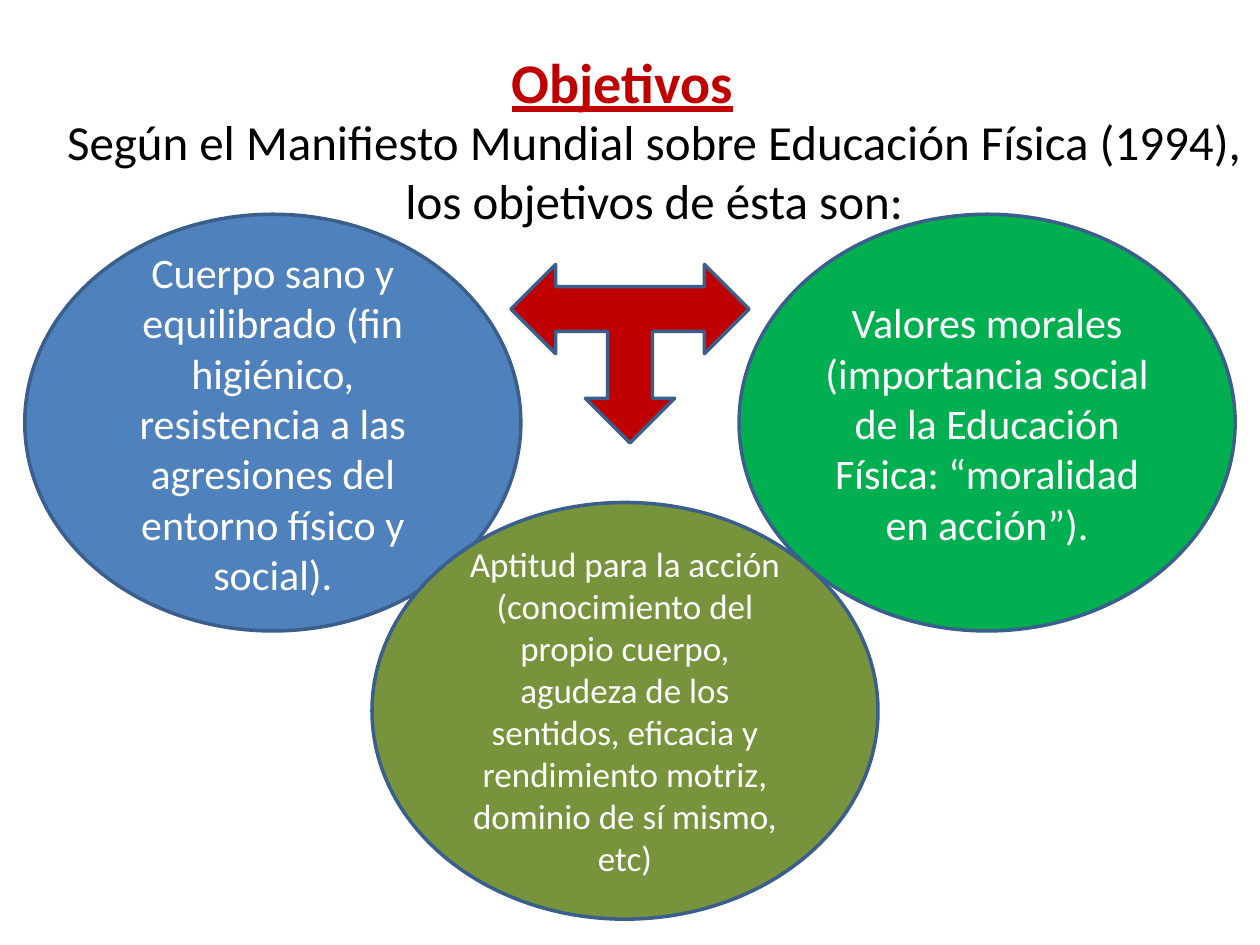
import pptx
import pptx.util
import pptx.dml.color
import pptx.enum.shapes
import pptx.enum.text

Cm = pptx.util.Cm
Pt = pptx.util.Pt
Kind = pptx.enum.shapes.MSO_SHAPE
Anchor = pptx.enum.text.MSO_ANCHOR
HUES = {
    "red": "C00000", "green": "00B050", "blue": "4F81BD", "olive": "77933C",
    "edge": "3A5F8C", "black": "000000", "white": "FFFFFF",
}


class Deck:
    """Holds the style and the current slide."""

    def __init__(self):
        self.font = "Calibri"
        self.show = pptx.Presentation()
        self.show.slide_width = Cm(25.4)
        self.show.slide_height = Cm(19.05)
        self.slide = self.show.slides.add_slide(self.show.slide_layouts[6])

    def hue(self, name):
        return pptx.dml.color.RGBColor.from_string(HUES[name])

    def letter(self, shape, text, size, hue, anchor, bold=False):
        frame = shape.text_frame
        frame.word_wrap = True
        frame.vertical_anchor = anchor
        frame.text = text
        line = frame.paragraphs[0]
        line.alignment = pptx.enum.text.PP_ALIGN.CENTER
        font = line.runs[0].font
        font.name = self.font
        font.size = Pt(size)
        font.color.rgb = self.hue(hue)
        font.bold = font.underline = bold

    def label(self, box, text, size, hue, anchor, bold=False):
        shape = self.slide.shapes.add_textbox(*map(Cm, box))
        self.letter(shape, text, size, hue, anchor, bold)

    def form(self, kind, box, fill):
        shape = self.slide.shapes.add_shape(kind, *map(Cm, box))
        shape.shadow.inherit = False
        shape.fill.solid()
        shape.fill.fore_color.rgb = self.hue(fill)
        shape.line.color.rgb = self.hue("edge")
        shape.line.width = Pt(2)
        return shape

    def oval(self, box, fill, text, size):
        shape = self.form(Kind.OVAL, box, fill)
        self.letter(shape, text, size, "white", Anchor.MIDDLE)

    def arrow(self, box, fill):
        shape = self.form(Kind.LEFT_RIGHT_UP_ARROW, box, fill)
        shape.rotation = 180


def main():
    deck = Deck()
    deck.label((1.12, 0.76, 22.86, 1.75), "Objetivos", 32, "red", Anchor.MIDDLE, True)
    deck.label(
        (0.97, 2.13, 24.43, 3),
        "Según el Manifiesto Mundial sobre Educación Física (1994), los objetivos de ésta son:",
        28, "black", Anchor.TOP,
    )
    wide, high, top = 10, 8.4, 4.32
    deck.oval(
        (14.9, top, wide, high), "green",
        "Valores morales (importancia social de la Educación Física: “moralidad en acción”).", 24,
    )
    deck.oval(
        (0.5, top, wide, high), "blue",
        "Cuerpo sano y equilibrado (fin higiénico, resistencia a las agresiones "
        "del entorno físico y social).", 24,
    )
    deck.oval(
        (7.5, 10.13, 10.2, high), "olive",
        "Aptitud para la acción (conocimiento del propio cuerpo, agudeza de los sentidos, "
        "eficacia y rendimiento motriz, dominio de sí mismo, etc)", 20,
    )
    deck.arrow((10.3, 5.33, 4.8, 3.6), "red")
    deck.show.save("out.pptx")


if __name__ == "__main__":
    main()
